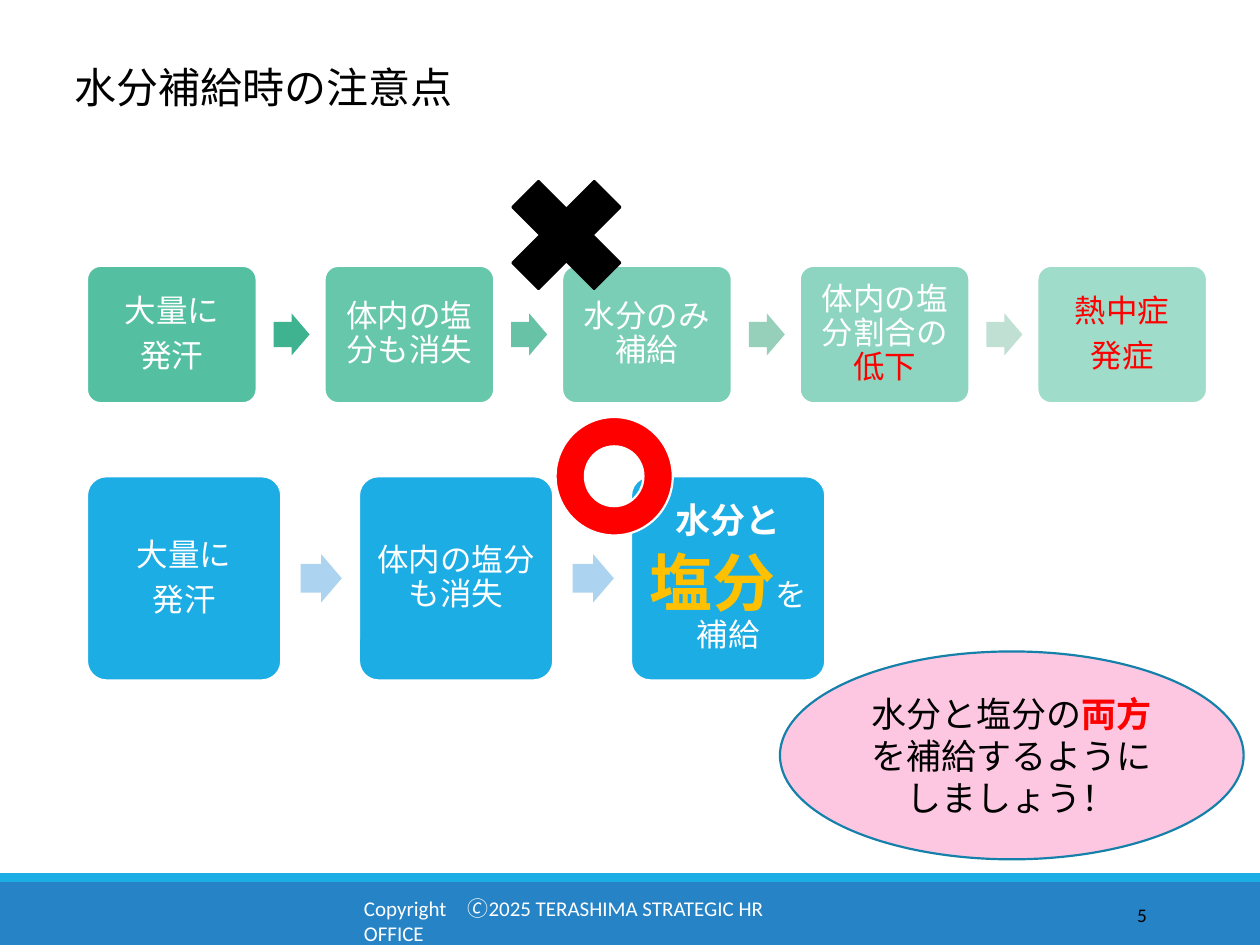
from lxml.etree import SubElement
from pptx import Presentation
from pptx.dml.color import RGBColor
from pptx.enum.shapes import MSO_SHAPE
from pptx.enum.text import MSO_ANCHOR, PP_ALIGN
from pptx.oxml.ns import qn
from pptx.util import Inches, Pt

HEX = {
    "white": "FFFFFF", "black": "000000", "red": "FF0000", "gold": "FFC000",
    "green": "42BA97", "cyan": "1CADE4", "blue": "2683C6", "pale": "ACD3EF",
    "pink": "FDC7E1", "edge": "1580A9",
}
FADES = ["3FB290", "68C3A6", "96D0BB", "C1E0D4"]
LATIN, KANJI = "Calibri", "Noto Sans CJK JP"


def rgb(name):
    return RGBColor.from_string(HEX.get(name, name))


def draw(shapes, kind, box, fill, line=None, adjust=(), alpha=None):
    """Add a flat preset shape; box is left, top, width, height in inches."""
    shape = shapes.add_shape(kind, *map(Inches, box))
    shape.shadow.inherit = False
    for i, value in enumerate(adjust):
        shape.adjustments[i] = value
    shape.fill.solid()
    shape.fill.fore_color.rgb = rgb(fill)
    if alpha:
        color = shape.fill._xPr.find(qn("a:solidFill"))[0]
        SubElement(color, qn("a:alpha")).set("val", str(alpha * 1000))
    if line:
        shape.line.color.rgb = rgb(line)
        shape.line.width = Pt(1.25)
    else:
        shape.line.fill.background()
    return shape


def write(frame, paras, size, color, font=LATIN, align=PP_ALIGN.CENTER,
          anchor=MSO_ANCHOR.MIDDLE):
    """Fill a frame; a paragraph is a list of (text, overrides) runs."""
    frame.word_wrap = True
    frame.vertical_anchor = anchor
    for i, runs in enumerate(paras):
        para = frame.paragraphs[0] if i == 0 else frame.add_paragraph()
        para.alignment = align
        para.font.name = font
        para.font.size = Pt(size)
        para.font.color.rgb = rgb(color)
        for text, style in runs:
            run = para.add_run()
            run.text = text
            if "color" in style:
                run.font.color.rgb = rgb(style["color"])
            if "size" in style:
                run.font.size = Pt(style["size"])
            if "bold" in style:
                run.font.bold = True


def label(shapes, box, text, size, color, **style):
    frame = shapes.add_textbox(*map(Inches, box)).text_frame
    write(frame, [[(text, {})]], size, color, **style)


def flow(slide, box, steps, fill, arrows, alphas):
    """A row of steps joined by arrows; gaps are 40% of a step's width."""
    left, top, width, height = box
    shapes = slide.shapes.add_group_shape().shapes
    wide = width / (1.4 * len(steps) - 0.4)
    for i, paras in enumerate(steps):
        x = left + 1.4 * wide * i
        step = draw(shapes, MSO_SHAPE.ROUNDED_RECTANGLE, (x, top, wide, height),
                    fill, "white", [0.1], alphas[i])
        frame = step.text_frame
        frame.margin_left = frame.margin_right = Inches(0.07)
        frame.margin_top = frame.margin_bottom = Inches(0.07)
        write(frame, paras, 18, "white")
        for para in frame.paragraphs:
            para.line_spacing = 0.9
            para.space_after = Pt(6.3)
        if i < len(arrows):
            tall = 0.248 * wide
            spot = (x + 1.1 * wide, top + (height - tall) / 2, 0.212 * wide, tall)
            draw(shapes, MSO_SHAPE.RIGHT_ARROW, spot, arrows[i], adjust=[0.6, 0.5])


def footer(slide, box):
    left, top, width, height = box
    shapes = slide.shapes
    draw(shapes, MSO_SHAPE.RECTANGLE, (left, top + 0.07, width, height - 0.07), "blue")
    draw(shapes, MSO_SHAPE.RECTANGLE, (left, top, width, 0.07), "cyan")
    label(shapes, (left + 2.79, top + 0.13, 3.84, 0.3),
          "Copyright　🄫2025 TERASHIMA STRATEGIC HR OFFICE", 12, "white",
          align=PP_ALIGN.LEFT, anchor=MSO_ANCHOR.TOP)
    label(shapes, (left + 8.12, top + 0.13, 1.08, 0.4), "5", 11, "black",
          align=PP_ALIGN.RIGHT)


def advice(slide, box):
    oval = draw(slide.shapes, MSO_SHAPE.OVAL, box, "pink", "edge")
    write(oval.text_frame, [
        [("水分と塩分の", {}), ("両方", {"color": "red", "bold": True}),
         ("を補給するように", {})],
        [("しましょう！", {})],
    ], 20, "black", KANJI)


def main():
    deck = Presentation()
    deck.slide_width, deck.slide_height = Inches(10), Inches(7.5)
    slide = deck.slides.add_slide(deck.slide_layouts[6])
    shapes = slide.shapes

    footer(slide, (0, 6.93, 10, 0.57))
    label(shapes, (0.49, 0.44, 3.81, 0.5), "水分補給時の注意点", 24, "black",
          font=KANJI, align=PP_ALIGN.LEFT, anchor=MSO_ANCHOR.TOP)

    # Shared first steps, then the wrong and the right way on
    red = {"color": "red"}
    start = [
        [[("大量に", {})], [("発汗", {})]],
        [[("体内の塩分も消失", {})]],
    ]
    wrong = start + [
        [[("水分のみ補給", {})]],
        [[("体内の塩分割合の", {}), ("低下", red)]],
        [[("熱中症", red)], [("発症", red)]],
    ]
    right = start + [[
        [("水分と", {"size": 20, "bold": True})],
        [("塩分", {"size": 36, "color": "gold", "bold": True}), ("を補給", {})],
    ]]
    flow(slide, (0.69, 2.11, 8.89, 1.09), wrong, "green", FADES, range(90, 40, -10))
    flow(slide, (0.69, 3.78, 5.86, 1.62), right, "cyan", ["pale"] * 2, [None] * 3)

    # Verdict marks
    draw(shapes, MSO_SHAPE.MATH_MULTIPLY, (3.87, 1.24, 1.25, 1.25), "black", "black")
    draw(shapes, MSO_SHAPE.DONUT, (4.41, 3.31, 0.93, 0.94), "red", "white")

    advice(slide, (6.19, 5.17, 3.68, 1.65))
    deck.save("out.pptx")


if __name__ == "__main__":
    main()
